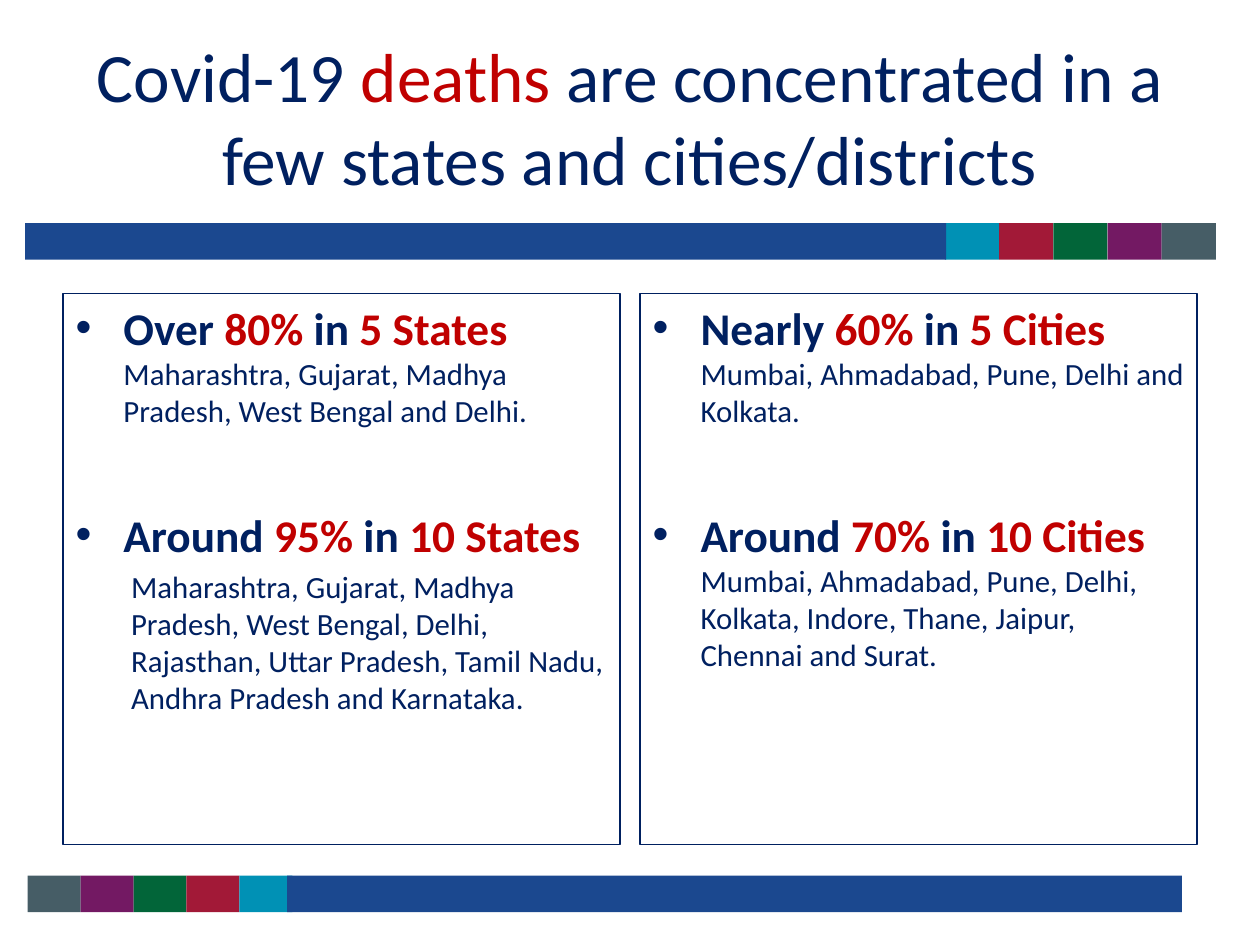
from lxml.etree import SubElement
from pptx import Presentation
from pptx.dml.color import RGBColor
from pptx.enum.shapes import MSO_SHAPE
from pptx.enum.text import MSO_ANCHOR, MSO_AUTO_SIZE, PP_ALIGN
from pptx.oxml.ns import qn
from pptx.util import Inches, Pt

COLORS = {
    "navy": "002060", "accent": "C00000", "bar": "1B488F",
    "cyan": "0091B5", "crimson": "A21937", "green": "026539",
    "purple": "731963", "slate": "465D66",
}
SWATCHES = ["cyan", "crimson", "green", "purple", "slate"]
FONT = "Calibri"
TITLE_SIZE, HEADING_SIZE, DETAIL_SIZE = 39.6, 25.9, 17.6
MARGIN, PANEL_TOP, PANEL_WIDTH, PANEL_HEIGHT = 0.5, 2.33, 4.42, 4.37
PANEL_PITCH = 4.58
BAND_HEIGHT = 0.29
BULLET_INDENT, DETAIL_INDENT = 0.38, 0.44
FINDING_GAP = 45

STATES = [
    (("Over ", "80% ", "in", " 5 States "),
     "Maharashtra, Gujarat, Madhya Pradesh, West Bengal and Delhi.", False),
    (("Around ", "95%", " in ", "10 States"),
     "Maharashtra, Gujarat, Madhya Pradesh, West Bengal, Delhi, Rajasthan, "
     "Uttar Pradesh, Tamil Nadu, Andhra Pradesh and Karnataka.", True),
]
CITIES = [
    (("Nearly ", "60% ", "in", " 5 Cities "),
     "Mumbai, Ahmadabad, Pune, Delhi and Kolkata.", False),
    (("Around ", "70% ", "in ", "10 Cities "),
     "Mumbai, Ahmadabad, Pune, Delhi, Kolkata, Indore, Thane, Jaipur, "
     "Chennai and Surat.", False),
]


def rgb(name):
    return RGBColor.from_string(COLORS[name])


def place(shape, left, top, width, height):
    shape.left, shape.top = Inches(left), Inches(top)
    shape.width, shape.height = Inches(width), Inches(height)


def add_run(paragraph, text, size, color="navy", bold=False):
    run = paragraph.add_run()
    run.text = text
    run.font.size = Pt(size)
    run.font.bold = bold
    run.font.color.rgb = rgb(color)


def add_alternating(paragraph, parts, size, bold=False):
    """Write the parts in navy and accent by turns."""
    for index, part in enumerate(parts):
        add_run(paragraph, part, size, ("navy", "accent")[index % 2], bold)


def set_indent(paragraph, left, hanging=0, bullet=None):
    properties = paragraph._p.get_or_add_pPr()
    properties.set("marL", str(Inches(left)))
    properties.set("indent", str(-Inches(hanging)))
    if bullet:
        SubElement(properties, qn("a:buChar")).set("char", bullet)
    else:
        SubElement(properties, qn("a:buNone"))


def fill_title(title):
    place(title, MARGIN, 0.3, 9, 1.25)
    frame = title.text_frame
    frame.auto_size = MSO_AUTO_SIZE.NONE
    frame.vertical_anchor = MSO_ANCHOR.MIDDLE
    heading = frame.paragraphs[0]
    heading.alignment = PP_ALIGN.CENTER
    add_alternating(heading, ("Covid-19 ", "deaths ",
                              "are concentrated in a few states and cities/districts"),
                    TITLE_SIZE)
    heading.font.name = FONT


def fill_panel(panel, column, findings):
    place(panel, MARGIN + column * PANEL_PITCH, PANEL_TOP, PANEL_WIDTH, PANEL_HEIGHT)
    panel.line.color.rgb = rgb("navy")
    panel.line.width = Pt(0.75)
    frame = panel.text_frame
    frame.auto_size = MSO_AUTO_SIZE.NONE
    for index, (headline, places, on_own_level) in enumerate(findings):
        finding = frame.add_paragraph() if index else frame.paragraphs[0]
        if index:
            finding.space_before = Pt(FINDING_GAP)
        set_indent(finding, BULLET_INDENT, BULLET_INDENT, "•")
        add_alternating(finding, headline, HEADING_SIZE, bold=True)
        finding.font.name = FONT
        detail = finding
        if on_own_level:
            detail = frame.add_paragraph()
            detail.level = 1
            set_indent(detail, DETAIL_INDENT)
            detail.font.name = FONT
        add_run(detail, places, DETAIL_SIZE)


def add_band(slide, top, bar_left, bar_width, swatch_left, swatch_width, swatches):
    band = slide.shapes.add_group_shape()
    blocks = [(swatch_left + index * swatch_width, swatch_width, color)
              for index, color in enumerate(swatches)]
    for left, width, color in blocks + [(bar_left, bar_width, "bar")]:
        block = band.shapes.add_shape(MSO_SHAPE.RECTANGLE, Inches(left), Inches(top),
                                      Inches(width), Inches(BAND_HEIGHT))
        block.shadow.inherit = False
        block.fill.solid()
        block.fill.fore_color.rgb = rgb(color)
        block.line.fill.background()


def main():
    deck = Presentation()
    deck.slide_width, deck.slide_height = Inches(10), Inches(7.5)
    slide = deck.slides.add_slide(deck.slide_layouts.get_by_name("Two Content"))
    title, *panels = slide.placeholders
    fill_title(title)
    for column, (panel, findings) in enumerate(zip(panels, (STATES, CITIES))):
        fill_panel(panel, column, findings)
    add_band(slide, 1.77, 0.2, 7.31, 7.5, 0.43, SWATCHES)
    add_band(slide, 6.95, 2.28, 7.1, 0.22, 0.42, SWATCHES[::-1])
    deck.save("out.pptx")


if __name__ == "__main__":
    main()
